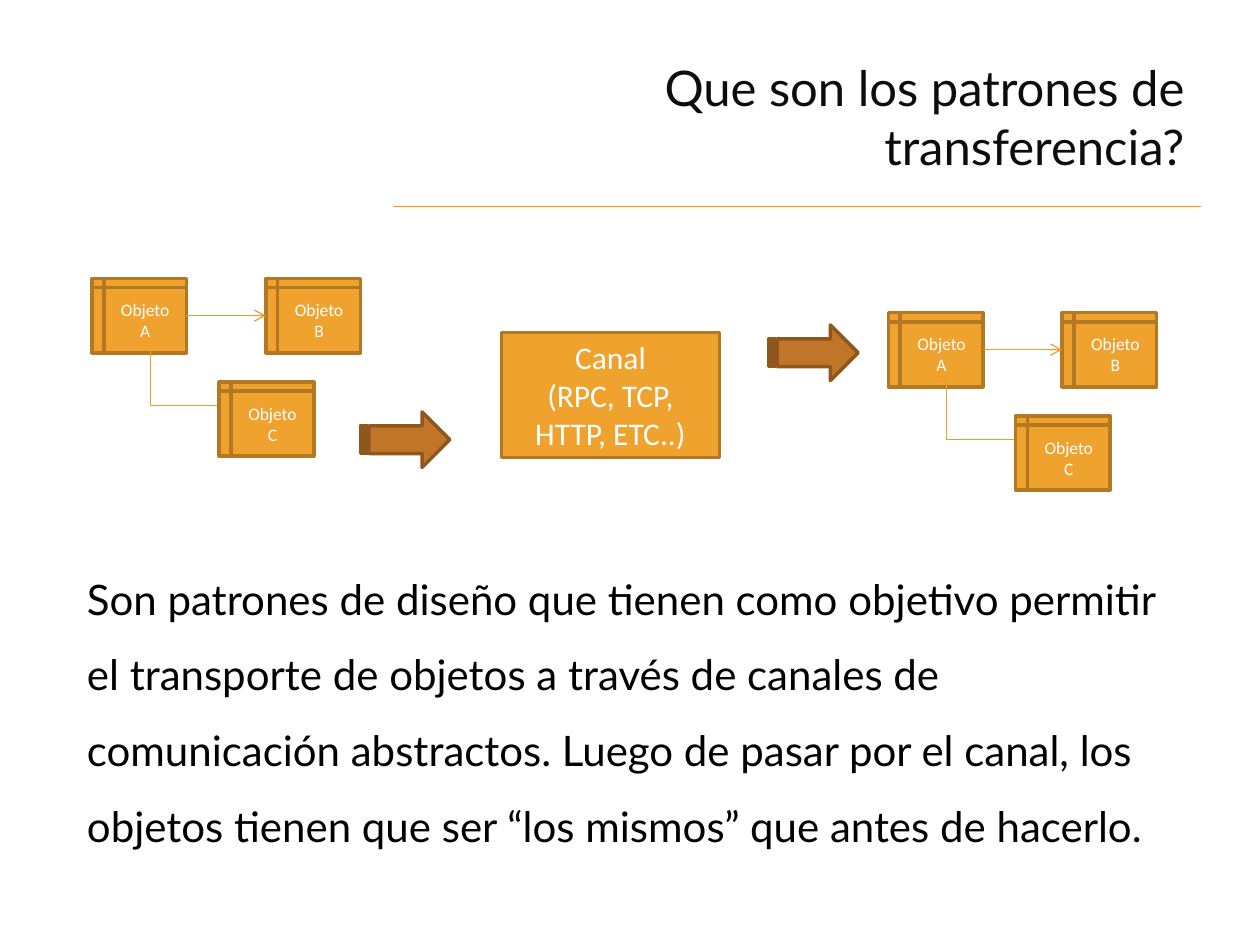
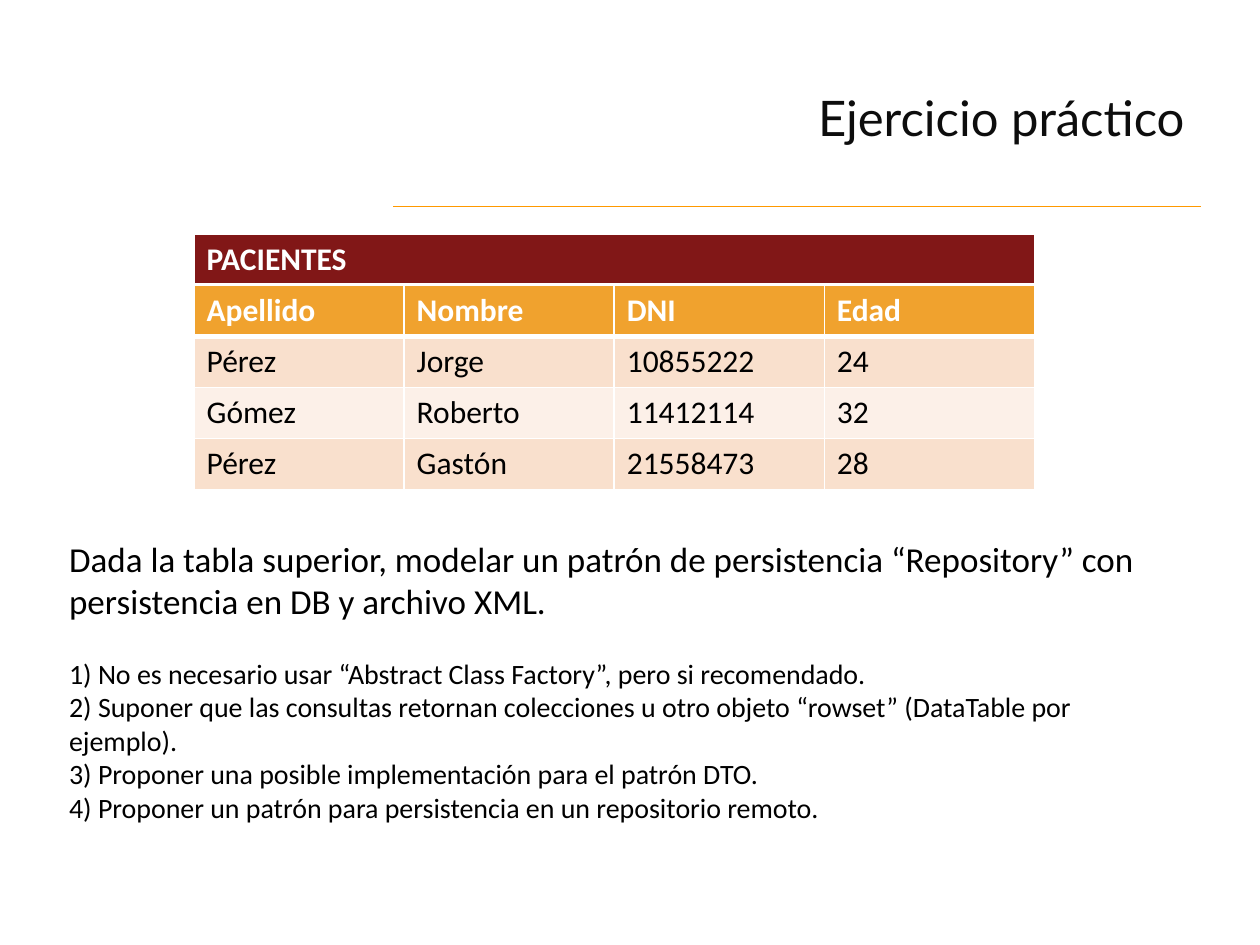
"""Builds two slides on transfer patterns: a diagram and a practical exercise."""
import pptx
import pptx.dml.color
import pptx.enum.shapes
import pptx.enum.text
import pptx.oxml
import pptx.oxml.ns
import pptx.util
from pptx.util import Inches

COLORS = {
    "rule": "FF9900", "title": "0D0D0D", "text": "000000", "white": "FFFFFF",
    "box": "F0A22E", "box_edge": "B27822", "link": "EF9F28",
    "arrow": "C17529", "arrow_edge": "8F571E",
    "caption": "811717", "band_dark": "F9E0CD", "band_light": "FCF0E8",
}
HEADING_FONT = "Lato"
PLAIN_FONT = "Calibri"
SHAPES = pptx.enum.shapes.MSO_SHAPE
CONNECTORS = pptx.enum.shapes.MSO_CONNECTOR
ALIGN = pptx.enum.text.PP_ALIGN
ANCHOR = pptx.enum.text.MSO_ANCHOR
OBJECT_WIDTH, OBJECT_HEIGHT = 0.75, 0.59
ROW_HEIGHT = 0.405
TABLE_LEFT, TABLE_TOP, TABLE_WIDTH = 1.54, 1.86, 6.67

PATIENTS = [
    ["Apellido", "Nombre", "DNI", "Edad"],
    ["Pérez", "Jorge", "10855222", "24"],
    ["Gómez", "Roberto", "11412114", "32"],
    ["Pérez", "Gastón", "21558473", "28"],
]
DEFINITION = (
    "Son patrones de diseño que tienen como objetivo permitir el transporte de objetos "
    "a través de canales de comunicación abstractos. Luego de pasar por el canal, los "
    "objetos tienen que ser “los mismos” que antes de hacerlo."
)
TASK = (
    "Dada la tabla superior, modelar un patrón de persistencia “Repository” con "
    "persistencia en DB y archivo XML."
)
HINTS = [
    "1) No es necesario usar “Abstract Class Factory”, pero si recomendado.",
    "2) Suponer que las consultas retornan colecciones u otro objeto “rowset” "
    "(DataTable por ejemplo).",
    "3) Proponer una posible implementación para el patrón DTO.",
    "4) Proponer un patrón para persistencia en un repositorio remoto.",
]


def rgb(name):
    return pptx.dml.color.RGBColor.from_string(COLORS[name])


def add_child(parent, tag, **attributes):
    child = pptx.oxml.ns.qn(tag)
    element = parent.makeelement(child, attributes)
    parent.append(element)
    return element


def add_span(para, text, size, color, font=PLAIN_FONT, bold=False):
    span = para.add_run()
    span.text = text
    span.font.size = pptx.util.Pt(size)
    span.font.name = font
    span.font.bold = bold
    span.font.color.rgb = rgb(color)


def place(shape, left, top, width, height):
    shape.left, shape.top = Inches(left), Inches(top)
    shape.width, shape.height = Inches(width), Inches(height)


def add_line(shapes, kind, start, end, color, arrow=False):
    line = shapes.add_connector(kind, *map(Inches, start + end))
    line.line.color.rgb = rgb(color)
    line.line.width = pptx.util.Pt(0.75)
    if arrow:
        add_child(line.line._get_or_add_ln(), "a:tailEnd", type="arrow")
    add_child(line._element.spPr, "a:effectLst")
    return line


def add_page(deck, layout, title):
    page = deck.slides.add_slide(deck.slide_layouts.get_by_name(layout))
    add_line(page.shapes, CONNECTORS.STRAIGHT, (9.53, 1.64), (3.12, 1.64), "rule")
    heading = page.shapes.title
    place(heading, 3.2, 0.3, 6.3, 1.25)
    frame = heading.text_frame
    frame.auto_size = pptx.enum.text.MSO_AUTO_SIZE.NONE
    frame.vertical_anchor = ANCHOR.MIDDLE
    para = frame.paragraphs[0]
    para.alignment = ALIGN.RIGHT
    add_span(para, title, 28, "title", HEADING_FONT)
    return page


def add_block(shapes, kind, left, top, width, height, fill, edge, lines=(), size=10):
    block = shapes.add_shape(kind, *map(Inches, (left, top, width, height)))
    block.shadow.inherit = False
    block.fill.solid()
    block.fill.fore_color.rgb = rgb(fill)
    block.line.color.rgb = rgb(edge)
    block.line.width = pptx.util.Pt(2)
    frame = block.text_frame
    frame.word_wrap = True
    frame.vertical_anchor = ANCHOR.MIDDLE
    for index, text in enumerate(lines):
        para = frame.add_paragraph() if index else frame.paragraphs[0]
        para.alignment = ALIGN.CENTER
        add_span(para, text, size, "white")
    return block


def add_object(shapes, letter, left, top):
    return add_block(shapes, SHAPES.FLOWCHART_INTERNAL_STORAGE, left, top,
                     OBJECT_WIDTH, OBJECT_HEIGHT, "box", "box_edge", [f"Objeto {letter}"])


def add_object_graph(page, left, top):
    shapes = page.shapes.add_group_shape().shapes
    object_a = add_object(shapes, "A", left, top)
    object_b = add_object(shapes, "B", left + 1.38, top)
    middle = top + OBJECT_HEIGHT / 2
    link = add_line(shapes, CONNECTORS.STRAIGHT, (left + OBJECT_WIDTH, middle),
                    (left + 1.38, middle), "link", arrow=True)
    link.begin_connect(object_a, 3)
    link.end_connect(object_b, 1)
    elbow = add_line(shapes, CONNECTORS.ELBOW, (left + 0.38, top + 0.51),
                     (left + 1.11, top + 1.01), "link", arrow=True)
    elbow_guides = elbow._element.spPr.prstGeom.get_or_add_avLst()
    add_child(elbow_guides, "a:gd", name="adj1", fmla="val 11300")
    add_object(shapes, "C", left + 1.01, top + 0.82)


def add_transfer_arrow(page, left, top):
    add_block(page.shapes, SHAPES.STRIPED_RIGHT_ARROW, left, top, 0.71, 0.44,
              "arrow", "arrow_edge")


def fill_cell(cell, text, fill, header, bottom_width):
    properties = cell._tc.get_or_add_tcPr()
    for side, width in (("L", 1), ("R", 1), ("T", 1), ("B", bottom_width)):
        edge = add_child(properties, f"a:ln{side}", w=str(pptx.util.Pt(width)))
        add_child(add_child(edge, "a:solidFill"), "a:srgbClr", val=COLORS["white"])
    cell.fill.solid()
    cell.fill.fore_color.rgb = rgb(fill)
    add_span(cell.text_frame.paragraphs[0], text, 18,
             "white" if header else "text", bold=header)


def add_grid(page, top, rows, header_fill):
    frame = page.shapes.add_table(
        len(rows), len(rows[0]), Inches(TABLE_LEFT), Inches(top),
        Inches(TABLE_WIDTH), Inches(ROW_HEIGHT * len(rows)))
    table = frame.table
    table.horz_banding = False
    for row_index, row in enumerate(rows):
        header = row_index == 0
        band = "band_dark" if row_index % 2 else "band_light"
        for column_index, text in enumerate(row):
            fill_cell(table.cell(row_index, column_index), text,
                      header_fill if header else band, header, 3 if header else 1)


def add_definition(page):
    body = page.placeholders[1]
    place(body, 0.59, 4.3, 9, 2.52)
    body.text_frame.auto_size = pptx.enum.text.MSO_AUTO_SIZE.NONE
    para = body.text_frame.paragraphs[0]
    properties = para._p.get_or_add_pPr()
    properties.set("marL", "0")
    properties.set("indent", "0")
    add_child(properties, "a:buNone")
    para.line_spacing = 1.5
    para.space_before = pptx.util.Pt(0)
    add_span(para, DEFINITION, 24, "text", HEADING_FONT)


def add_exercise(page):
    box = page.shapes.add_textbox(*map(Inches, (0.45, 4.22, 8.82, 2.39)))
    frame = box.text_frame
    frame.word_wrap = True
    add_span(frame.paragraphs[0], TASK, 20, "text")
    for index, hint in enumerate(HINTS):
        para = frame.add_paragraph()
        if index == 0:
            para.space_before = pptx.util.Pt(19.5)
        add_span(para, hint, 16, "text")


def main():
    deck = pptx.Presentation()
    deck.slide_width, deck.slide_height = Inches(10), Inches(7.5)

    page = add_page(deck, "Title and Content", "Que son los patrones de transferencia?")
    add_definition(page)
    add_transfer_arrow(page, 2.86, 3.27)
    add_object_graph(page, 0.73, 2.21)
    add_transfer_arrow(page, 6.1, 2.58)
    add_block(page.shapes, SHAPES.RECTANGLE, 3.98, 2.64, 1.73, 0.99, "box", "box_edge",
              ["Canal", "(RPC, TCP, HTTP, ETC..)"], 18)
    add_object_graph(page, 7.05, 2.48)

    page = add_page(deck, "Title Only", "Ejercicio práctico")
    add_exercise(page)
    add_grid(page, TABLE_TOP, [["PACIENTES"]], "caption")
    add_grid(page, TABLE_TOP + ROW_HEIGHT, PATIENTS, "box")

    deck.save("out.pptx")


if __name__ == "__main__":
    main()
